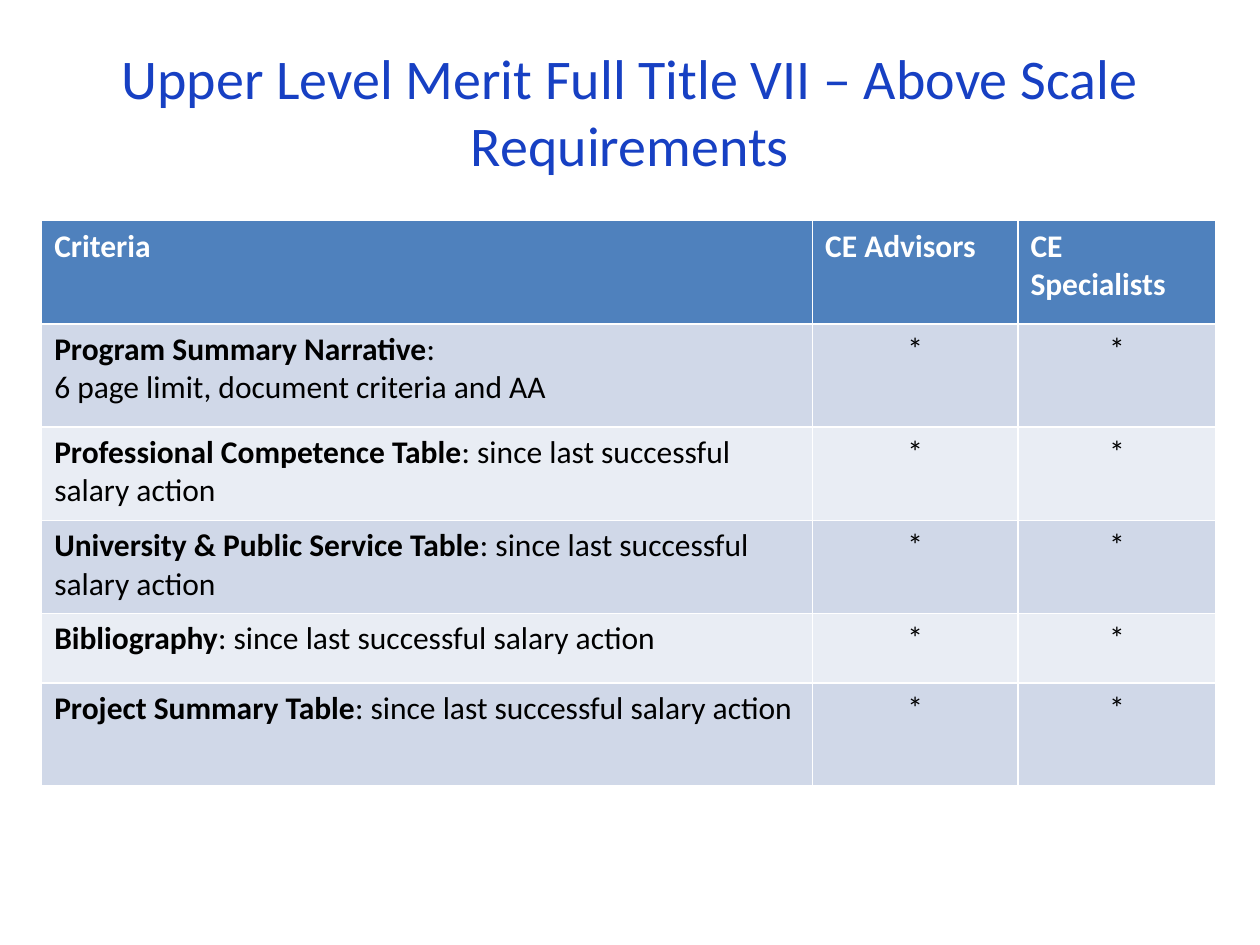
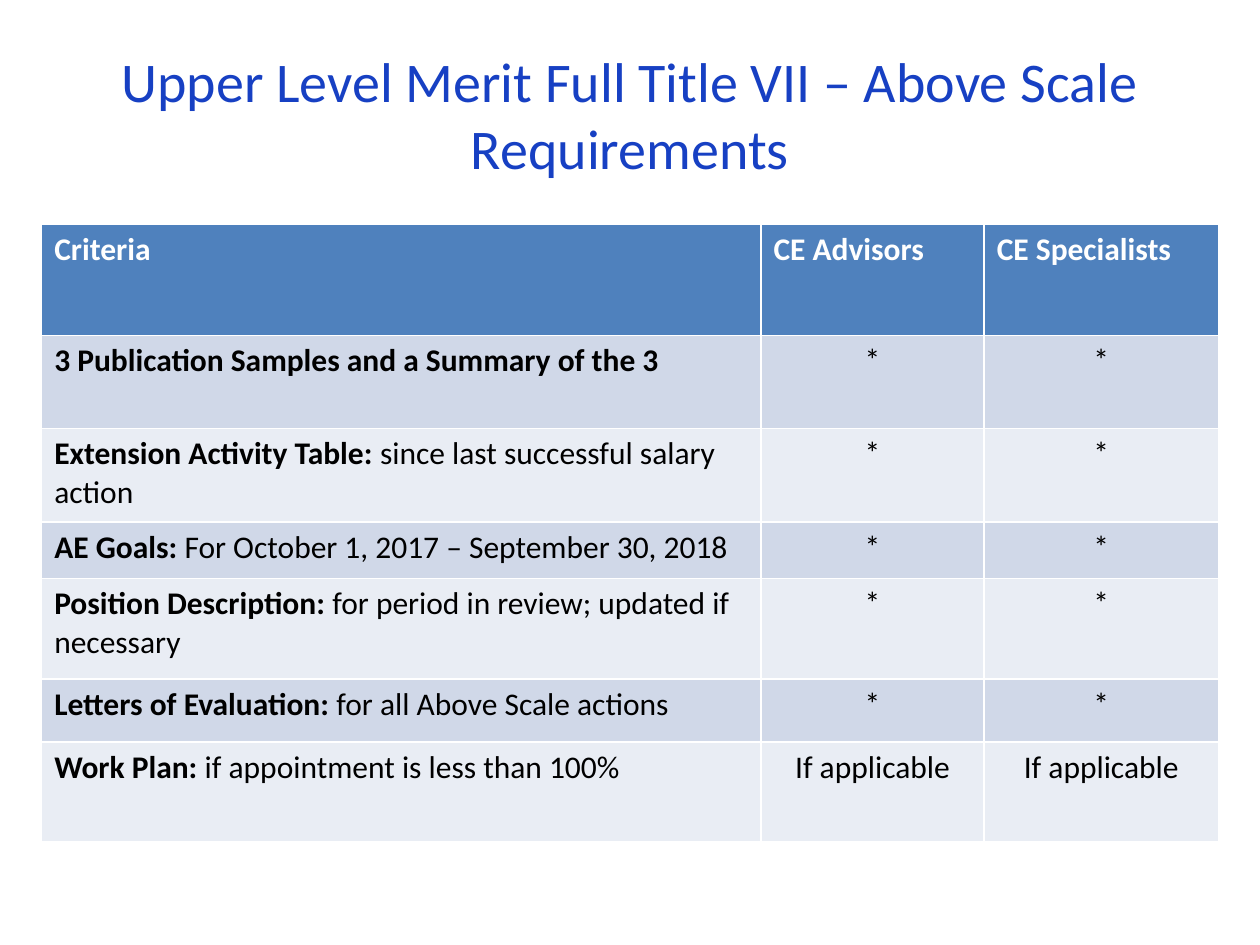
from dataclasses import dataclass

from pptx import Presentation
from pptx.dml.color import RGBColor
from pptx.enum.text import MSO_ANCHOR, MSO_AUTO_SIZE, PP_ALIGN
from pptx.util import Cm, Pt

FONT = "Calibri"
TITLE_BLUE = RGBColor(0x17, 0x40, 0xC3)
HEADER_BLUE = RGBColor(0x4F, 0x81, 0xBD)
BANDS = (RGBColor(0xD0, 0xD8, 0xE8), RGBColor(0xE9, 0xED, 0xF4))
WHITE = RGBColor(0xFF, 0xFF, 0xFF)
BLACK = RGBColor(0x00, 0x00, 0x00)

TITLE = "Upper Level Merit Full Title VII – Above Scale Requirements"
HEADINGS = ("Criteria", "CE Advisors", "CE Specialists")
SINCE_LAST = "since last successful salary action"


@dataclass
class Criterion:
    height: float
    label: str
    detail: str = ""
    mark: str = "*"


@dataclass
class Page:
    title_top: float
    table_top: float
    widths: tuple[float, ...]
    header_height: float
    criteria: list[Criterion]


PAGES = [
    Page(1.17, 4.45, (15.54, 4.14, 3.99), 2.08, [
        Criterion(2.08, "Program Summary Narrative", ":\n6 page limit, document criteria and AA"),
        Criterion(1.88, "Professional Competence Table", f": {SINCE_LAST}"),
        Criterion(1.88, "University & Public Service Table", f": {SINCE_LAST}"),
        Criterion(1.4, "Bibliography", f": {SINCE_LAST}"),
        Criterion(2.08, "Project Summary Table", f": {SINCE_LAST}"),
    ]),
    Page(1.22, 4.52, (14.5, 4.5, 4.72), 2.24, [
        Criterion(1.88, "3 Publication Samples and a Summary of the 3"),
        Criterion(1.88, "Extension Activity Table: ", SINCE_LAST),
        Criterion(1.14, "AE Goals: ", "For October 1, 2017 – September 30, 2018"),
        Criterion(2.03, "Position Description: ", "for period in review; updated if necessary"),
        Criterion(1.27, "Letters of Evaluation: ", "for all Above Scale actions"),
        Criterion(2.01, "Work Plan: ", "if appointment is less than 100%", "If applicable"),
    ]),
]


def style_run(r, size: int, color: RGBColor, bold: bool = False) -> None:
    r.font.name = FONT
    r.font.size = Pt(size)
    r.font.color.rgb = color
    r.font.bold = bold


def add_title(s, top: float) -> None:
    sp = s.shapes.title
    sp.left, sp.top, sp.width, sp.height = Cm(1.27), Cm(top), Cm(22.86), Cm(2.13)
    tf = sp.text_frame
    tf.text = TITLE
    tf.auto_size = MSO_AUTO_SIZE.NONE
    tf.vertical_anchor = MSO_ANCHOR.MIDDLE
    p = tf.paragraphs[0]
    p.alignment = PP_ALIGN.CENTER
    style_run(p.runs[0], 32, TITLE_BLUE)


def fill_cell(cell, fill: RGBColor) -> None:
    cell.fill.solid()
    cell.fill.fore_color.rgb = fill


def write_cell(cell, text: str, fill: RGBColor, color: RGBColor,
               bold: bool, align: PP_ALIGN) -> None:
    fill_cell(cell, fill)
    cell.text_frame.text = text
    p = cell.text_frame.paragraphs[0]
    p.alignment = align
    style_run(p.runs[0], 18, color, bold)


def write_criterion(cell, criterion: Criterion, fill: RGBColor) -> None:
    write_cell(cell, criterion.label, fill, BLACK, True, PP_ALIGN.LEFT)
    tf = cell.text_frame
    for i, line in enumerate(criterion.detail.splitlines()):
        p = tf.add_paragraph() if i else tf.paragraphs[0]
        r = p.add_run()
        r.text = line
        style_run(r, 18, BLACK)


def add_criteria_table(s, page: Page) -> None:
    heights = [page.header_height] + [c.height for c in page.criteria]
    table = s.shapes.add_table(len(heights), len(page.widths), Cm(0.84), Cm(page.table_top),
                               Cm(sum(page.widths)), Cm(sum(heights))).table
    for column, width in zip(table.columns, page.widths):
        column.width = Cm(width)
    for row, height in zip(table.rows, heights):
        row.height = Cm(height)
    for col, heading in enumerate(HEADINGS):
        write_cell(table.cell(0, col), heading, HEADER_BLUE, WHITE, True, PP_ALIGN.LEFT)
    for i, criterion in enumerate(page.criteria):
        band = BANDS[i % 2]
        write_criterion(table.cell(i + 1, 0), criterion, band)
        for col in (1, 2):
            write_cell(table.cell(i + 1, col), criterion.mark, band, BLACK, False, PP_ALIGN.CENTER)


def main() -> None:
    prs = Presentation()
    prs.slide_width, prs.slide_height = Cm(25.4), Cm(19.05)
    title_only = prs.slide_layouts[5]
    for page in PAGES:
        s = prs.slides.add_slide(title_only)
        add_title(s, page.title_top)
        add_criteria_table(s, page)
    prs.save("out.pptx")


if __name__ == "__main__":
    main()
